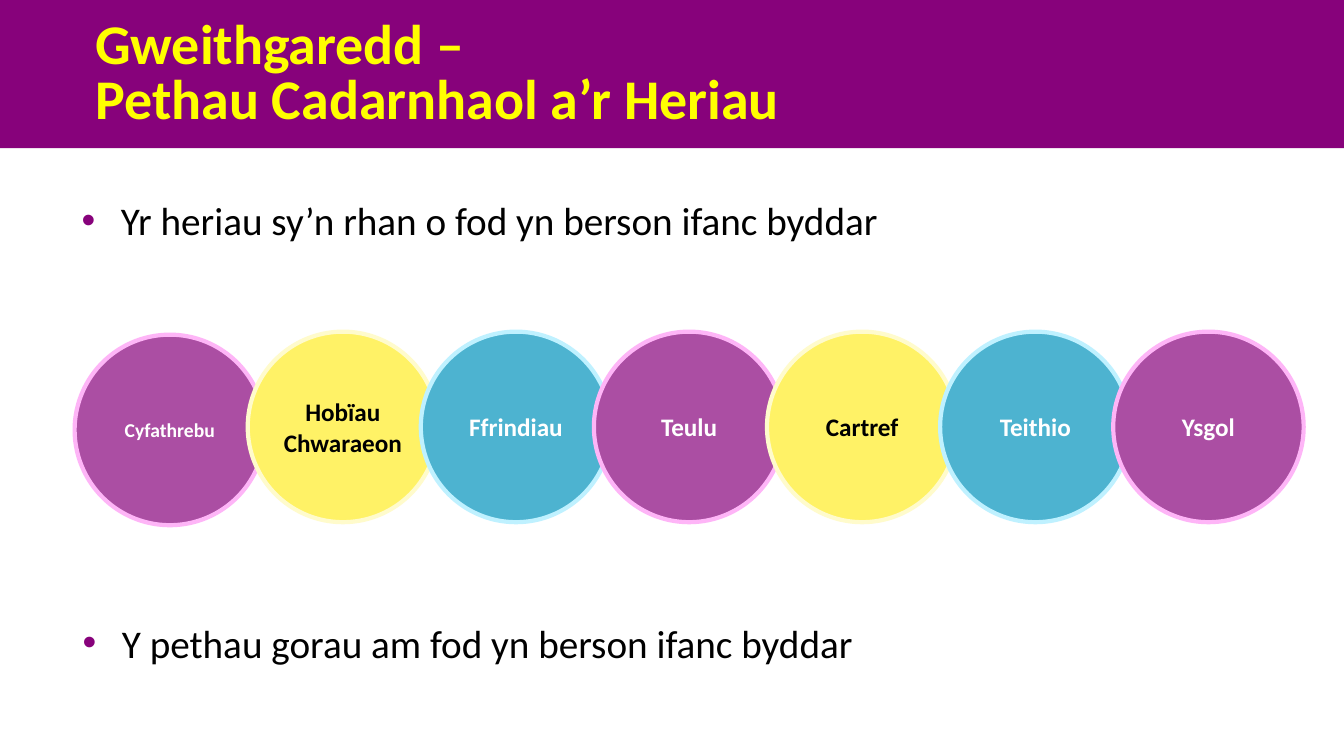
import dataclasses
import lxml.etree
import pptx
import pptx.dml.color
import pptx.enum.shapes
import pptx.enum.text
import pptx.oxml.ns
import pptx.util


@dataclasses.dataclass(frozen=True)
class Theme:
    font: str = "Calibri"
    brand: str = "87027B"
    head: str = "FFFF00"
    dark: str = "000000"
    plum: tuple = ("AB4EA3", "FEB5F7", "FFFFFF")
    lemon: tuple = ("FFF266", "FFFBCC", "000000")
    sky: tuple = ("4DB3D0", "BFF1FF", "FFFFFF")
    title: int = 40
    body: int = 28
    label: int = 18
    small: int = 14


def paint(code):
    return pptx.dml.color.RGBColor.from_string(code)


class Page:
    def __init__(self, deck, theme):
        self.theme = theme
        self.col = deck.slide_width / 100
        self.row = deck.slide_height / 100
        self.slide = deck.slides.add_slide(deck.slide_layouts[3])

    def place(self, left, top, width, height):
        return (round(left * self.col), round(top * self.row),
                round(width * self.col), round(height * self.row))

    def words(self, para, text, size, color, bold=False):
        run = para.add_run()
        run.text = text
        run.font.name = self.theme.font
        run.font.size = pptx.util.Pt(size)
        run.font.bold = bold
        run.font.color.rgb = paint(color)

    def holder(self, index, area, anchor):
        item = self.slide.placeholders[index]
        item.left, item.top, item.width, item.height = self.place(*area)
        frame = item.text_frame
        frame.word_wrap = True
        frame.auto_size = pptx.enum.text.MSO_AUTO_SIZE.NONE
        frame.vertical_anchor = anchor
        frame.margin_left = frame.margin_right = pptx.util.Inches(0.13)
        frame.margin_top = frame.margin_bottom = pptx.util.Inches(0.07)
        para = frame.paragraphs[0]
        para.alignment = pptx.enum.text.PP_ALIGN.LEFT
        para.space_before = pptx.util.Pt(0)
        return para

    def shape(self, kind, area, fill):
        item = self.slide.shapes.add_shape(kind, *self.place(*area))
        item.shadow.inherit = False
        item.fill.solid()
        item.fill.fore_color.rgb = paint(fill)
        return item

    def band(self, height):
        item = self.shape(pptx.enum.shapes.MSO_SHAPE.RECTANGLE,
                          (0, 0, 100, height), self.theme.brand)
        item.line.fill.background()
        tree = item.element.getparent()
        tree.remove(item.element)
        tree.insert(2, item.element)

    def title(self, lines, area):
        para = self.holder(0, area, pptx.enum.text.MSO_ANCHOR.MIDDLE)
        para.line_spacing = pptx.util.Pt(39.2)
        for count, line in enumerate(lines):
            if count:
                para.add_line_break()
            self.words(para, line, self.theme.title, self.theme.head, True)

    def bullet(self, index, text, area):
        para = self.holder(index, area, pptx.enum.text.MSO_ANCHOR.TOP)
        props = para._p.get_or_add_pPr()
        hang = pptx.util.Inches(0.39)
        props.set("marL", str(hang))
        props.set("indent", str(-hang))
        qn = pptx.oxml.ns.qn
        tint = lxml.etree.SubElement(props, qn("a:buClr"))
        lxml.etree.SubElement(tint, qn("a:srgbClr"), val=self.theme.brand)
        lxml.etree.SubElement(props, qn("a:buFont"), typeface="Arial")
        lxml.etree.SubElement(props, qn("a:buChar"), char="•")
        self.words(para, text, self.theme.body, self.theme.dark)

    def circle(self, lines, area, tone, size):
        fill, edge, ink = tone
        item = self.shape(pptx.enum.shapes.MSO_SHAPE.OVAL, area, fill)
        item.line.color.rgb = paint(edge)
        item.line.width = pptx.util.Pt(3)
        frame = item.text_frame
        frame.word_wrap = False
        frame.vertical_anchor = pptx.enum.text.MSO_ANCHOR.MIDDLE
        for count, line in enumerate(lines):
            para = frame.add_paragraph() if count else frame.paragraphs[0]
            para.alignment = pptx.enum.text.PP_ALIGN.CENTER
            self.words(para, line, size, ink, True)


def main():
    deck = pptx.Presentation()
    deck.slide_width = pptx.util.Inches(13.34)
    deck.slide_height = pptx.util.Inches(7.5)
    theme = Theme()
    page = Page(deck, theme)

    page.band(19.6)
    page.title(["Gweithgaredd –", "Pethau Cadarnhaol a’r Heriau"],
               (6.15, 4.8, 58, 10.53))
    page.bullet(1, "Yr heriau sy’n rhan o fod yn berson ifanc byddar",
                (5.1, 25.07, 92, 17.47))
    page.bullet(2, "Y pethau gorau am fod yn berson ifanc byddar",
                (5.17, 80.93, 92, 17.47))

    topics = [["Cyfathrebu"], ["Hobïau", "Chwaraeon"], ["Ffrindiau"],
              ["Teulu"], ["Cartref"], ["Teithio"], ["Ysgol"]]
    tones = [theme.plum, theme.lemon, theme.sky]
    for count, lines in enumerate(topics):
        first = count == 0
        area = (5.55 + 12.88 * count, 44.27 if first else 43.87, 14.17, 25.2)
        page.circle(lines, area, tones[count % len(tones)],
                    theme.small if first else theme.label)

    deck.save("out.pptx")


if __name__ == "__main__":
    main()
